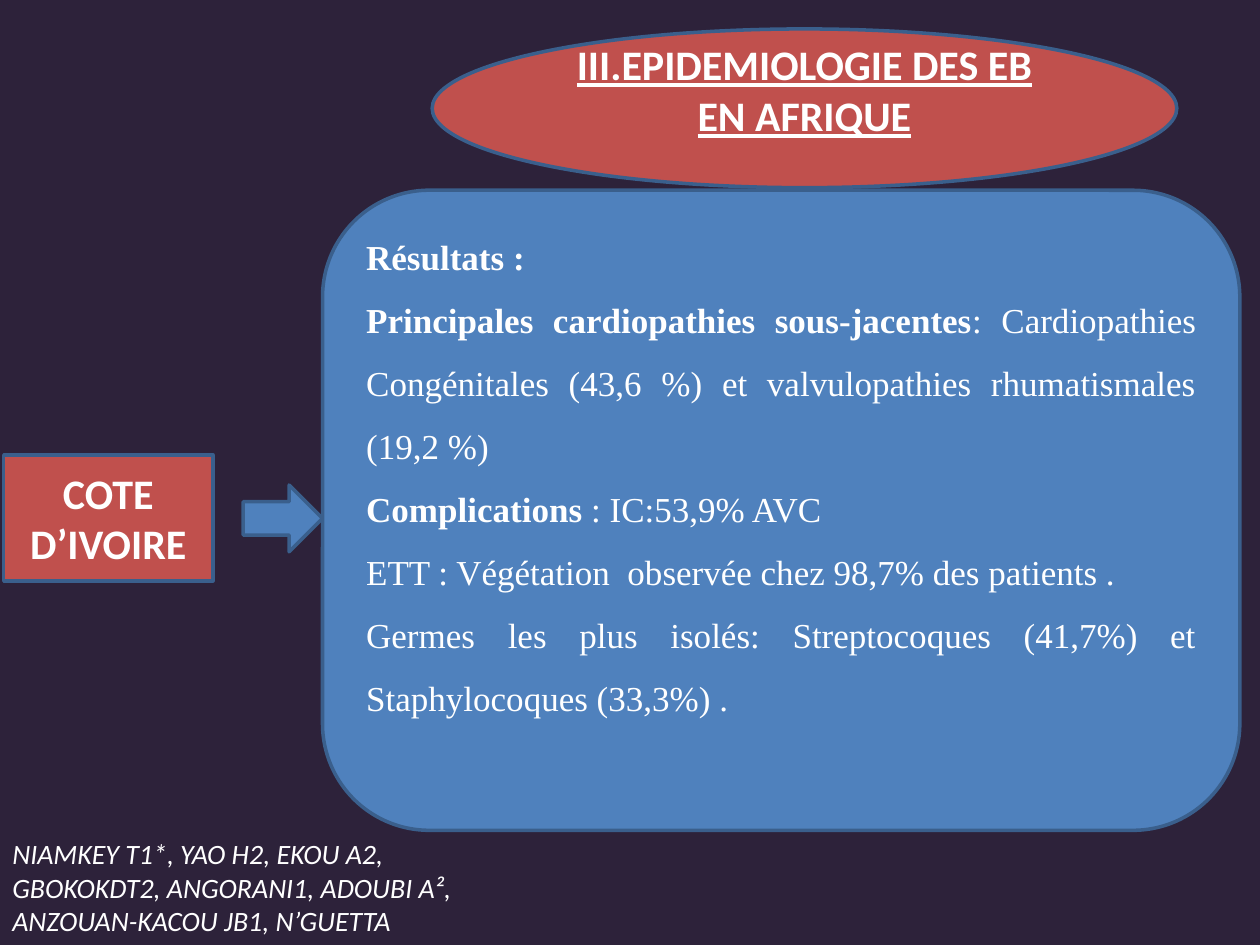
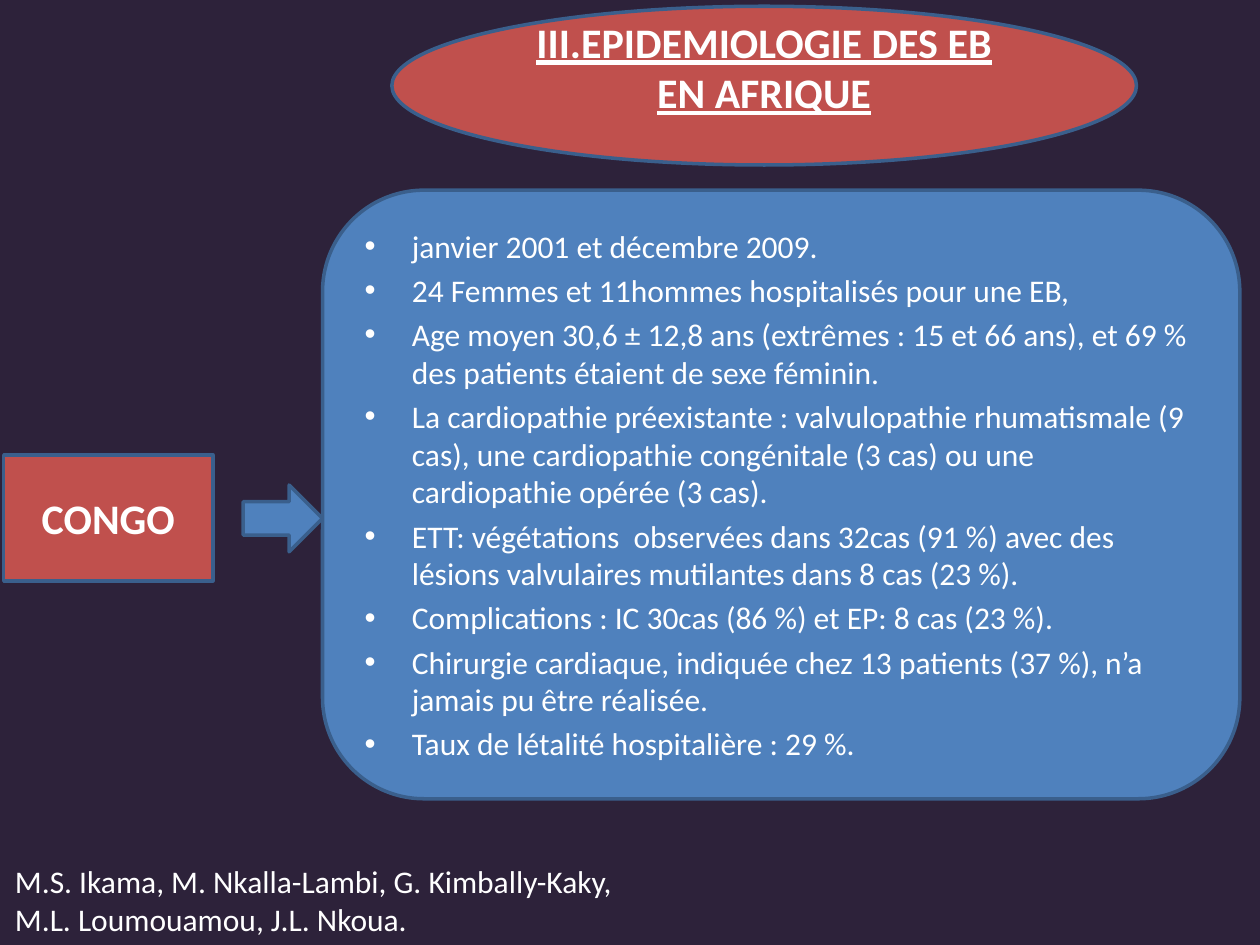
import pptx
import pptx.util
import pptx.dml.color
import pptx.enum.shapes
import pptx.enum.text
import lxml.etree

Pt = pptx.util.Pt
RGB = pptx.dml.color.RGBColor
SHAPE = pptx.enum.shapes.MSO_SHAPE
ALIGN = pptx.enum.text.PP_ALIGN
ANCHOR = pptx.enum.text.MSO_ANCHOR

NIGHT = RGB(0x2D, 0x22, 0x3A)
RED = RGB(0xC0, 0x50, 0x4D)
BLUE = RGB(0x4F, 0x81, 0xBD)
EDGE = RGB(0x3A, 0x5F, 0x8C)
WHITE = RGB(0xFF, 0xFF, 0xFF)
SANS, SERIF = "Calibri", "Times New Roman"

# Grid of 100 columns by 75 rows
UNIT = pptx.util.Inches(0.1)
COLS, ROWS = 100, 75

TITLE = "III.EPIDEMIOLOGIE DES EB EN AFRIQUE"

RESULTS = [
    [("Résultats :", True)],
    [("Principales cardiopathies sous-jacentes", True),
     (": Cardiopathies Congénitales (43,6 %) et valvulopathies rhumatismales (19,2 %)", False)],
    [("Complications", True), (" : IC:53,9% AVC", False)],
    [("ETT : Végétation  observée chez 98,7% des patients .", False)],
    [("Germes les plus isolés: Streptocoques (41,7%) et Staphylocoques (33,3%) .", False)],
]

FACTS = [
    "janvier 2001 et décembre 2009.",
    "24 Femmes et 11hommes hospitalisés pour une EB,",
    "Age moyen 30,6 ± 12,8 ans (extrêmes : 15 et 66 ans), et 69 % des patients étaient de sexe féminin.",
    "La cardiopathie préexistante : valvulopathie rhumatismale (9 cas), une cardiopathie "
    "congénitale (3 cas) ou une cardiopathie opérée (3 cas).",
    "ETT: végétations  observées dans 32cas (91 %) avec des lésions valvulaires mutilantes "
    "dans 8 cas (23 %).",
    "Complications : IC 30cas (86 %) et EP: 8 cas (23 %).",
    "Chirurgie cardiaque, indiquée chez 13 patients (37 %), n’a jamais pu être réalisée.",
    "Taux de létalité hospitalière : 29 %.",
]


def grid(*cells):
    return [round(cell * UNIT) for cell in cells]


def add_run(para, text, size, font=SANS, bold=False, under=False, italic=False):
    run = para.add_run()
    run.text = text
    face = run.font
    face.name, face.size = font, Pt(size)
    face.bold, face.italic, face.underline = bold, italic, under
    face.color.rgb = WHITE


def add_paras(frame, count):
    """Yield the first paragraph, then new ones."""
    for i in range(count):
        yield frame.add_paragraph() if i else frame.paragraphs[0]


def add_form(slide, kind, cells, fill):
    """Filled preset shape; returns its text frame."""
    form = slide.shapes.add_shape(kind, *grid(*cells))
    form.shadow.inherit = False
    form.fill.solid()
    form.fill.fore_color.rgb = fill
    form.line.color.rgb = EDGE
    form.line.width = Pt(2)
    frame = form.text_frame
    frame.word_wrap = True
    frame.vertical_anchor = ANCHOR.MIDDLE
    return frame


def add_label(frame, text, under=False):
    para = frame.paragraphs[0]
    para.alignment = ALIGN.CENTER
    add_run(para, text, 24, bold=True, under=under)


def add_bullet(para):
    props = para._p.get_or_add_pPr()
    indent = round(3.75 * UNIT)
    props.set("marL", str(indent))
    props.set("indent", str(-indent))
    space = "{http://schemas.openxmlformats.org/drawingml/2006/main}"
    lxml.etree.SubElement(props, space + "buFont").set("typeface", "Arial")
    lxml.etree.SubElement(props, space + "buChar").set("char", "•")


def add_source(slide, cells, text, size, italic=False):
    frame = slide.shapes.add_textbox(*grid(*cells)).text_frame
    frame.word_wrap = True
    add_run(frame.paragraphs[0], text, size, italic=italic)


def add_page(deck, land, left, top, depth):
    """Title, panel, country and arrow; returns the slide and the panel's text."""
    slide = deck.slides.add_slide(deck.slide_layouts[6])
    slide.background.fill.solid()
    slide.background.fill.fore_color.rgb = NIGHT
    title = add_form(slide, SHAPE.OVAL, (left, top, 59.1, 12.6), RED)
    title.margin_bottom = round(3.5 * UNIT)
    add_label(title, TITLE, under=True)
    panel = add_form(slide, SHAPE.ROUNDED_RECTANGLE, (25.6, 15.1, 72.8, depth), BLUE)
    add_label(add_form(slide, SHAPE.RECTANGLE, (0.3, 36.1, 16.6, 10), RED), land)
    add_form(slide, SHAPE.RIGHT_ARROW, (19.3, 38.5, 6.3, 5.3), BLUE)
    return slide, panel


def main():
    deck = pptx.Presentation()
    deck.slide_width, deck.slide_height = grid(COLS, ROWS)

    # Ivory Coast: justified results
    slide, panel = add_page(deck, "COTE D’IVOIRE", 34.3, 2.3, 50.8)
    panel.margin_bottom = round(7.5 * UNIT)
    for para, parts in zip(add_paras(panel, len(RESULTS)), RESULTS):
        para.alignment = ALIGN.JUSTIFY
        para.line_spacing = 1.5
        for text, bold in parts:
            add_run(para, text, 20, SERIF, bold)
    add_source(slide, (0, 65.9, 39, 9.1),
               "NIAMKEY T1*, YAO H2, EKOU A2, GBOKOKDT2, ANGORANI1, ADOUBI A², "
               "ANZOUAN-KACOU JB1, N’GUETTA", 16, italic=True)

    # Congo: bulleted facts
    slide, panel = add_page(deck, "CONGO", 31.1, 0.5, 48.3)
    for para, fact in zip(add_paras(panel, len(FACTS)), FACTS):
        para.alignment = ALIGN.LEFT
        para.space_before = Pt(3.6)
        add_bullet(para)
        add_run(para, fact, 18)
    add_source(slide, (0.2, 67.9, 50, 7.1),
               "M.S. Ikama, M. Nkalla-Lambi, G. Kimbally-Kaky, M.L. Loumouamou, J.L. Nkoua.", 18)

    deck.save("out.pptx")


if __name__ == "__main__":
    main()
